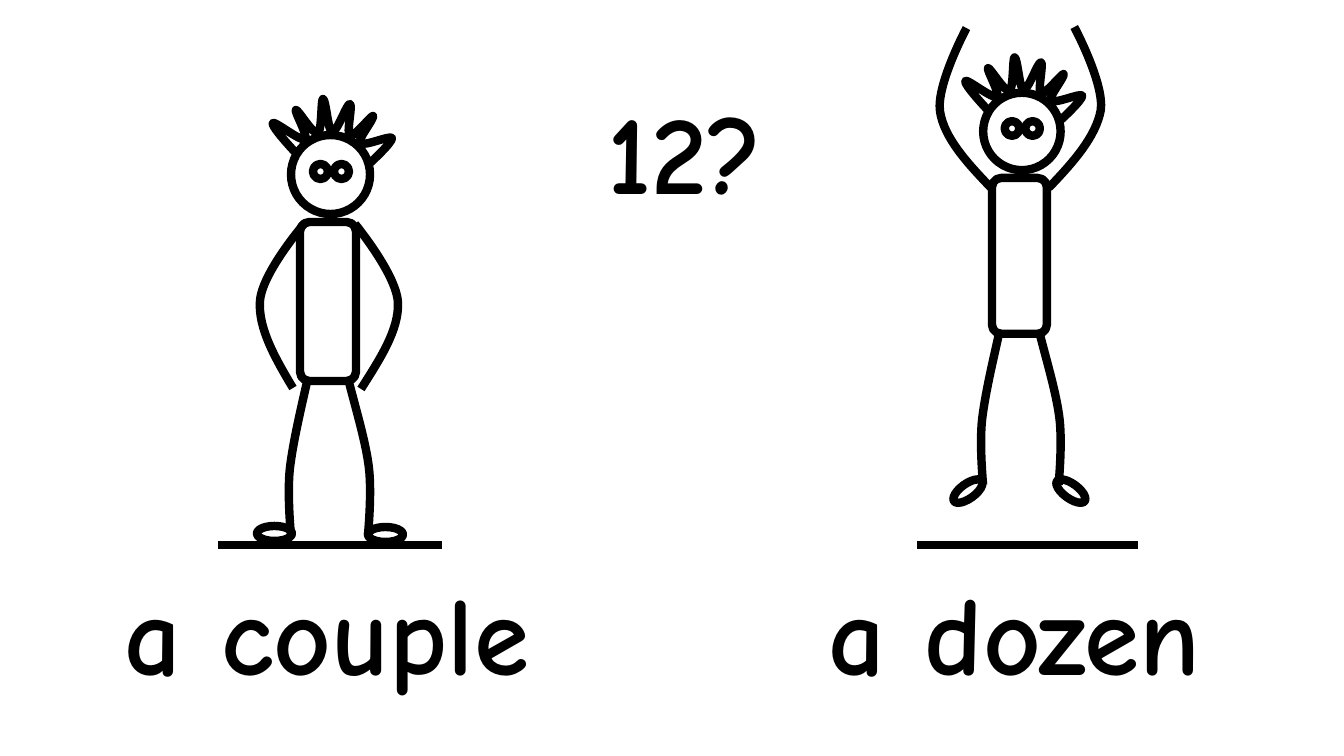
from pptx import Presentation
from pptx import util as u
from pptx.dml.color import RGBColor
from pptx.enum import shapes, text
from pptx.oxml.ns import qn
from lxml import etree

SCALE = 914400 / 100.8
INK = "000000"
FONT = {"name": "Comic Neue", "size": u.Pt(80), "bold": True}
FRAME = {
    "margin_left": 13, "margin_right": 13, "margin_top": 7, "margin_bottom": 7,
}
TITLE = ("12?", (35, 39, 1300, 239))
TORSO = (0, 0, 56, 159)
HEAD = (-9, -87, 79, 79)
EYES = [(13, -58, 15, 15), (34, -58, 15, 15)]
FOOT_SIZE = (35, 15)
LEGS = [
    [(7, 160), (0, 191), (-7, 221), (-10, 246), (-13, 272), (-9, 313), (-9, 313)],
    [(49, 160), (57, 191), (66, 221), (69, 246), (72, 272), (68, 313), (68, 313)],
]
HAIR = [
    (-5, -70), (-17, -83), (-29, -97), (-27, -99),
    (-25, -101), (1, -80), (5, -83), (9, -85), (-6, -111), (-4, -112),
    (-2, -113), (13, -87), (18, -89), (22, -91), (21, -123), (23, -123),
    (26, -123), (28, -91), (32, -90), (37, -89), (47, -119), (50, -118),
    (53, -117), (46, -88), (50, -86), (53, -84), (72, -107), (73, -106),
    (75, -104), (57, -82), (60, -79), (64, -75), (90, -87), (92, -84),
    (93, -80), (70, -59), (70, -59),
]
FIGURES = [
    {
        "label": "a dozen", "label_box": (721, 511, 587, 239),
        "origin": (992, 178), "zoom": 0.98, "ground": (917, 1138, 545),
        "arms": [
            [(58, 10), (83, -16), (106, -42), (111, -69), (115, -96), (84, -154), (84, -154)],
            [(-1, 10), (-25, -15), (-49, -41), (-53, -68), (-57, -95), (-26, -153), (-26, -153)],
        ],
        "feet": [(-42, 312, 324), (63, 312, 36)],
    },
    {
        "label": "a couple", "label_box": (67, 511, 520, 239),
        "origin": (300, 222), "zoom": 1, "ground": (218, 442, 545),
        "arms": [
            [(61, 167), (80, 137), (99, 108), (98, 81), (97, 53), (55, 2), (55, 2)],
            [(-7, 166), (-25, 136), (-42, 106), (-40, 79), (-38, 51), (4, 2), (4, 2)],
        ],
        "feet": [(-43, 304, 0), (68, 305, 0)],
    },
]


def px(value):
    return round(value * SCALE)


def color(value):
    return RGBColor.from_string(value)


def outline(shape):
    shape.line.color.rgb = color(INK)
    shape.line.width = u.Pt(6)


def write(shape, words, box):
    for name, value in zip(("left", "top", "width", "height"), box):
        setattr(shape, name, px(value))
    frame = shape.text_frame
    frame.text = words
    frame.word_wrap = True
    frame.auto_size = text.MSO_AUTO_SIZE.NONE
    frame.vertical_anchor = text.MSO_ANCHOR.MIDDLE
    for name, value in FRAME.items():
        setattr(frame, name, px(value))
    paragraph = frame.paragraphs[0]
    paragraph.alignment = text.PP_ALIGN.CENTER
    font = paragraph.runs[0].font
    for name, value in FONT.items():
        setattr(font, name, value)
    font.color.rgb = color(INK)
    return paragraph


def draw_figure(group, figure):
    left, top = figure["origin"]
    zoom = figure["zoom"]

    def place(x, y):
        return px(left + x * zoom), px(top + y * zoom)

    def finish(shape):
        shape.fill.background()
        shape.shadow.inherit = False
        outline(shape)

    def add_preset(kind, x, y, width, height, rotation=0):
        shape = group.shapes.add_shape(
            kind, *place(x, y), px(width * zoom), px(height * zoom))
        shape.rotation = rotation
        finish(shape)

    def add_curve(points):
        start, *rest = [place(*point) for point in points]
        builder = group.shapes.build_freeform(*start, scale=1.0)
        builder.add_line_segments(rest, close=False)
        shape = builder.convert_to_shape()
        segments = list(shape._element.iter(qn("a:lnTo")))
        for first in range(0, len(segments), 3):
            bezier = etree.Element(qn("a:cubicBezTo"))
            segments[first].addprevious(bezier)
            for segment in segments[first:first + 3]:
                bezier.append(segment[0])
                segment.getparent().remove(segment)
        finish(shape)

    oval = shapes.MSO_SHAPE.OVAL
    add_preset(shapes.MSO_SHAPE.ROUNDED_RECTANGLE, *TORSO)
    add_preset(oval, *HEAD)
    for curve in [*LEGS, *figure["arms"], HAIR]:
        add_curve(curve)
    for x, y, rotation in figure["feet"]:
        add_preset(oval, x, y, *FOOT_SIZE, rotation)
    for eye in EYES:
        add_preset(oval, *eye)
    start, end, level = figure["ground"]
    ground = group.shapes.add_connector(
        shapes.MSO_CONNECTOR.STRAIGHT, px(start), px(level), px(end), px(level))
    outline(ground)
    etree.SubElement(ground._element.spPr, qn("a:effectLst"))


def main():
    presentation = Presentation()
    presentation.slide_width = px(1344)
    presentation.slide_height = px(756)
    slide = presentation.slides.add_slide(presentation.slide_layouts[5])
    write(slide.shapes.title, *TITLE).line_spacing = 0.9
    for figure in FIGURES:
        label = slide.shapes.add_textbox(0, 0, 0, 0)
        write(label, figure["label"], figure["label_box"])
        draw_figure(slide.shapes.add_group_shape(), figure)
    presentation.save("out.pptx")


if __name__ == "__main__":
    main()
